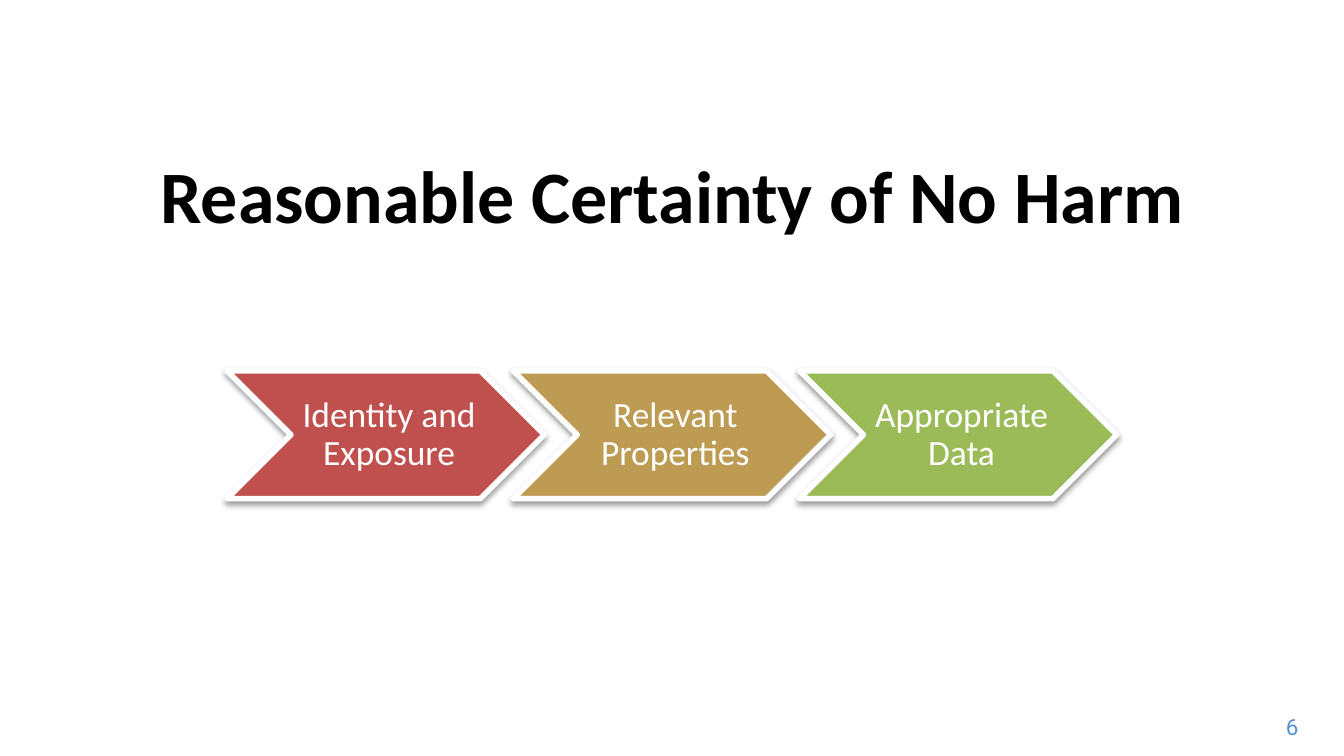
from dataclasses import dataclass
from typing import Any

import pptx
import pptx.dml.color
import pptx.enum.shapes
import pptx.enum.text
import pptx.oxml
import pptx.oxml.ns
import pptx.util

Inches = pptx.util.Inches
Pt = pptx.util.Pt
RGBColor = pptx.dml.color.RGBColor
Align = pptx.enum.text.PP_ALIGN
Anchor = pptx.enum.text.MSO_ANCHOR

BLACK = RGBColor(0x00, 0x00, 0x00)
WHITE = RGBColor(0xFF, 0xFF, 0xFF)
RED = RGBColor(0xC0, 0x50, 0x4D)
GOLD = RGBColor(0xBD, 0x9B, 0x53)
GREEN = RGBColor(0x9B, 0xBB, 0x59)
BLUE = RGBColor(0x55, 0x8E, 0xD5)

TITLE_FONT = {"name": "Calibri", "size": Pt(39.6), "bold": True}
STEP_FONT = {"name": "Calibri", "size": Pt(19)}
NUMBER_FONT = {"name": "Roboto", "size": Pt(12)}
STEP_FRAME = {
    "word_wrap": True,
    "vertical_anchor": Anchor.MIDDLE,
    "margin_left": Inches(0.08),
    "margin_right": Inches(0.03),
    "margin_top": Inches(0.03),
    "margin_bottom": Inches(0.03),
}

# Chevron row, in inches
ROW_LEFT, ROW_TOP, STEP_PITCH = 1.69, 2.76, 2.13
STEP_WIDTH, STEP_HEIGHT = 2.36, 0.95
LABEL_INSET = STEP_HEIGHT / 2

SHADOW = (
    f'<a:effectLst {pptx.oxml.ns.nsdecls("a")}>'
    '<a:outerShdw blurRad="40000" dist="20000" dir="5400000" rotWithShape="0">'
    '<a:srgbClr val="000000"><a:alpha val="38000"/></a:srgbClr>'
    "</a:outerShdw></a:effectLst>"
)


@dataclass
class Step:
    label: str
    color: RGBColor


STEPS = [
    Step("Identity and Exposure", RED),
    Step("Relevant Properties", GOLD),
    Step("Appropriate Data", GREEN),
]


def apply_format(target: Any, values: dict[str, Any]) -> None:
    for name, value in values.items():
        setattr(target, name, value)


def write_text(box: Any, text: str, align: Any, font: dict[str, Any], color: RGBColor) -> Any:
    para = box.text_frame.paragraphs[0]
    para.alignment = align
    span = para.add_run()
    span.text = text
    apply_format(span.font, font)
    span.font.color.rgb = color
    return para


def draw_step(shapes: Any, step: Step, left: float) -> None:
    chevron = shapes.add_shape(
        pptx.enum.shapes.MSO_SHAPE.CHEVRON,
        Inches(left), Inches(ROW_TOP), Inches(STEP_WIDTH), Inches(STEP_HEIGHT),
    )
    chevron.fill.solid()
    chevron.fill.fore_color.rgb = step.color
    chevron.line.color.rgb = WHITE
    chevron.line.width = Pt(3)
    chevron.element.spPr.append(pptx.oxml.parse_xml(SHADOW))

    label = shapes.add_textbox(
        Inches(left + LABEL_INSET), Inches(ROW_TOP),
        Inches(STEP_WIDTH - 2 * LABEL_INSET), Inches(STEP_HEIGHT),
    )
    apply_format(label.text_frame, STEP_FRAME)
    para = write_text(label, step.label, Align.CENTER, STEP_FONT, WHITE)
    para.line_spacing = 0.9


def main() -> None:
    # Widescreen 16:9 page
    deck = pptx.Presentation()
    deck.slide_width = Inches(10)
    deck.slide_height = deck.slide_width * 9 // 16
    page = deck.slides.add_slide(deck.slide_layouts[5])

    # Slide number
    number = page.shapes.add_textbox(Inches(9.35), Inches(5.26), Inches(0.41), Inches(0.3))
    number.text_frame.word_wrap = False
    number.text_frame.auto_size = pptx.enum.text.MSO_AUTO_SIZE.SHAPE_TO_FIT_TEXT
    write_text(number, "6", Align.RIGHT, NUMBER_FONT, BLUE)

    # Title
    title = page.shapes.title
    apply_format(title, {
        "left": Inches(0.35), "top": Inches(1.06),
        "width": Inches(9.31), "height": Inches(0.76),
    })
    title.text_frame.vertical_anchor = Anchor.MIDDLE
    write_text(title, "Reasonable Certainty of No Harm", Align.CENTER, TITLE_FONT, BLACK)

    # Process steps
    process = page.shapes.add_group_shape()
    for index, step in enumerate(STEPS):
        draw_step(process.shapes, step, ROW_LEFT + index * STEP_PITCH)

    deck.save("out.pptx")


if __name__ == "__main__":
    main()
